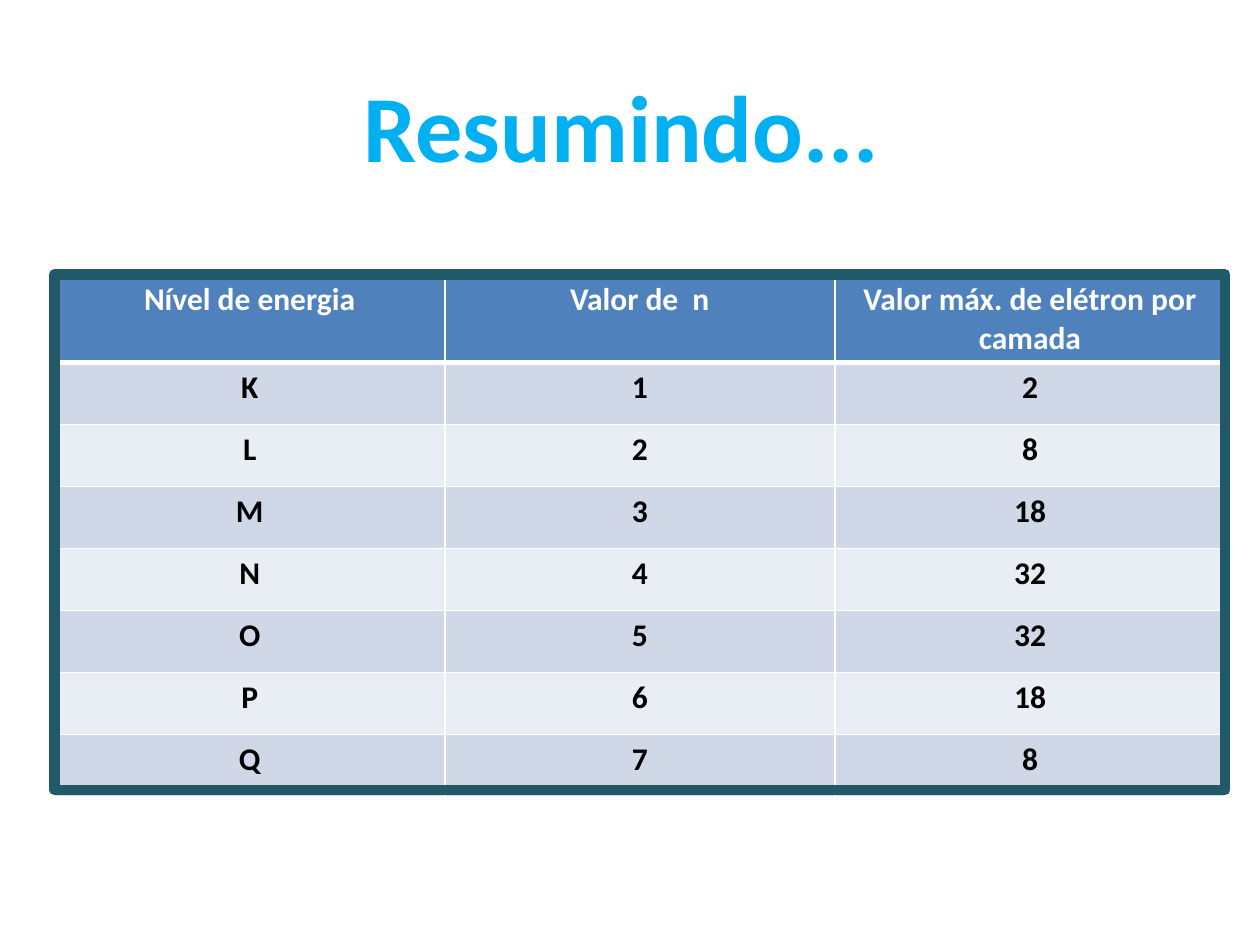
from lxml import etree
from pptx import Presentation
from pptx.dml.color import RGBColor
from pptx.enum.shapes import MSO_SHAPE
from pptx.enum.text import MSO_ANCHOR, PP_ALIGN
from pptx.oxml.ns import qn
from pptx.util import Cm, Pt

RECTANGLE = MSO_SHAPE.RECTANGLE
MIDDLE = MSO_ANCHOR.MIDDLE
CENTER = PP_ALIGN.CENTER

WHITE = "FFFFFF"
BLACK = "000000"
SKY = "00B0F0"
BLUE = "4F81BD"
TEAL = "215968"
BANDS = ("D0D8E8", "E9EDF4")

HEADERS = ("Nível de energia", "Valor de  n", "Valor máx. de elétron por camada")
LEVELS = "KLMNOPQ"
MAX_ELECTRONS = (2, 8, 18, 32, 32, 18, 8)


def color(value):
    return RGBColor.from_string(value)


def write(tf, text, size=18, fill=BLACK, bold=True, align=CENTER):
    p = tf.paragraphs[0]
    p.alignment = align
    r = p.add_run()
    r.text = text
    r.font.name = "Calibri"
    r.font.size = Pt(size)
    r.font.bold = bold
    r.font.color.rgb = color(fill)


def set_borders(cell, bottom):
    tc_pr = cell._tc.get_or_add_tcPr()
    widths = (("lnL", 1), ("lnR", 1), ("lnT", 1), ("lnB", bottom))
    for i, (side, width) in enumerate(widths):
        ln = etree.Element(qn(f"a:{side}"), w=str(Pt(width)))
        solid = etree.SubElement(ln, qn("a:solidFill"))
        etree.SubElement(solid, qn("a:srgbClr"), val=WHITE)
        tc_pr.insert(i, ln)


def add_title(s, left, top, width, height):
    tf = s.shapes.add_textbox(left, top, width, height).text_frame
    tf.word_wrap = True
    tf.vertical_anchor = MIDDLE
    write(tf, "Resumindo...", size=54, fill=SKY)


def add_levels_table(s, left, top, width, height):
    rows = [HEADERS]
    for n, (level, limit) in enumerate(zip(LEVELS, MAX_ELECTRONS), 1):
        rows.append((level, str(n), str(limit)))
    table = s.shapes.add_table(len(rows), len(HEADERS), left, top, width, height).table
    for i, row in enumerate(rows):
        is_header = i == 0
        for j, text in enumerate(row):
            cell = table.cell(i, j)
            cell.fill.solid()
            cell.fill.fore_color.rgb = color(BLUE if is_header else BANDS[(i - 1) % 2])
            set_borders(cell, bottom=3 if is_header else 1)
            write(cell.text_frame, text, fill=WHITE if is_header else BLACK)


def add_frame(s, left, top, width, height):
    sp = s.shapes.add_shape(RECTANGLE, left, top, width, height)
    sp.shadow.inherit = False
    sp.fill.background()
    sp.line.color.rgb = color(TEAL)
    sp.line.width = Pt(6)
    etree.SubElement(sp.line._get_or_add_ln(), qn("a:round"))


def main():
    prs = Presentation()
    prs.slide_width, prs.slide_height = Cm(25.4), Cm(19.05)
    s = prs.slides.add_slide(prs.slide_layouts[6])
    left, top, width = Cm(1.1), Cm(5.53), Cm(23.6)
    add_title(s, left, Cm(0.92), Cm(22.86), Cm(3.18))
    add_levels_table(s, left, top, width, Cm(10))
    add_frame(s, left, top, width, Cm(10.4))
    prs.save("out.pptx")


if __name__ == "__main__":
    main()
